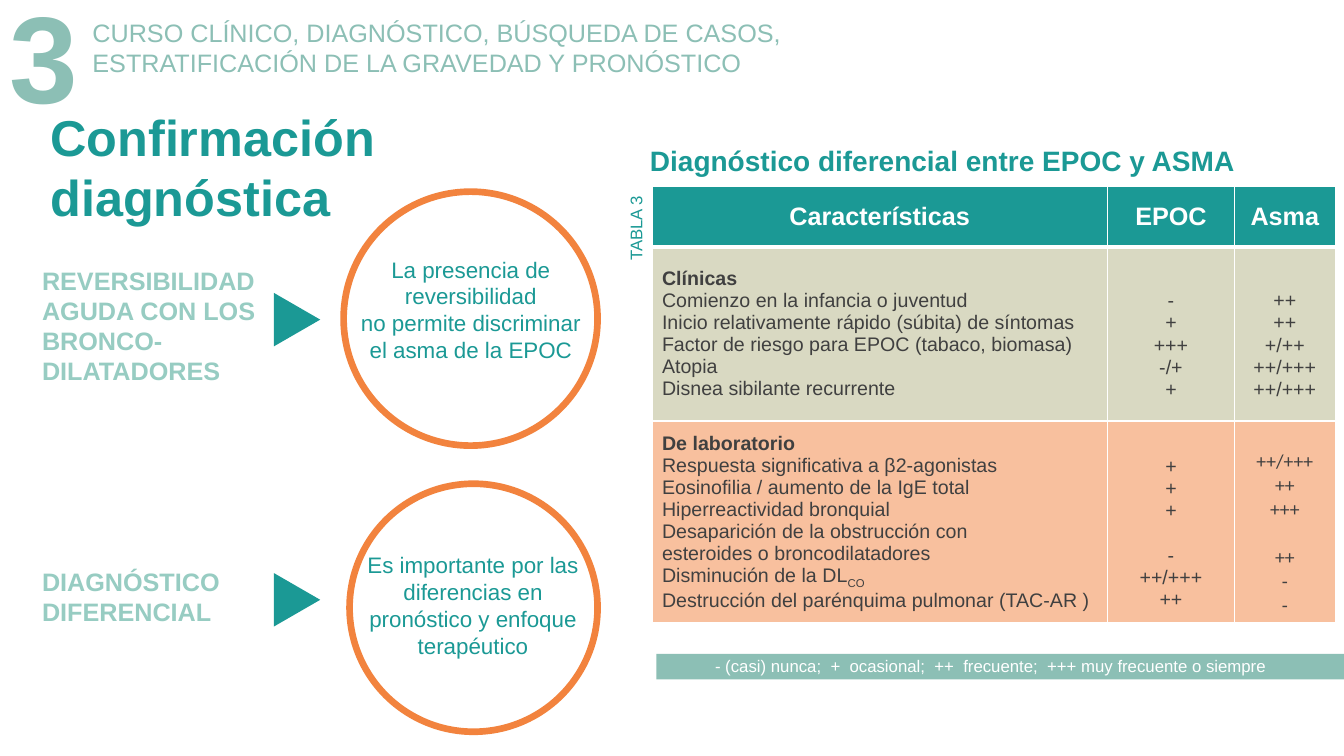
from lxml.etree import SubElement
from pptx import Presentation
from pptx.dml.color import RGBColor
from pptx.enum.shapes import MSO_SHAPE as Preset
from pptx.enum.text import MSO_ANCHOR as Anchor, PP_ALIGN as Align
from pptx.oxml.ns import qn
from pptx.util import Cm, Pt

TEAL, MINT, PALE_MINT = "1B9995", "8CBFB5", "97CCC2"
ORANGE, OLIVE, WHITE, GREY = "F2833E", "B9B98D", "FFFFFF", "404040"
SYMBOL_COLUMNS = (1, 2)

CLINICAL = [
    "Clínicas\nComienzo en la infancia o juventud\n"
    "Inicio relativamente rápido (súbita) de síntomas\n"
    "Factor de riesgo para EPOC (tabaco, biomasa)\nAtopia\n"
    "Disnea sibilante recurrente",
    "-\n+\n+++\n-/+\n+",
    "++\n++\n+/++\n++/+++\n++/+++",
]
LABORATORY = [
    "De laboratorio\nRespuesta significativa a β2-agonistas\n"
    "Eosinofilia / aumento de la IgE total\nHiperreactividad bronquial\n"
    "Desaparición de la obstrucción con\nesteroides o broncodilatadores\n"
    "Disminución de la DL\nDestrucción del parénquima pulmonar (TAC-AR )",
    "+\n+\n+\n-\n++/+++\n++",
    "++/+++\n++\n+++\n++\n-\n-",
]


def color(hex_code):
    return RGBColor.from_string(hex_code)


def format_text(text_frame, size, hex_code, bold=False, align=Align.LEFT, font="Arial"):
    for paragraph in text_frame.paragraphs:
        paragraph.alignment = align
        for run in paragraph.runs:
            run.font.name = font
            run.font.size = Pt(size)
            run.font.bold = bold
            run.font.color.rgb = color(hex_code)


def add_text(slide, box, text, size, hex_code, wrap=True, rotation=0, **style):
    shape = slide.shapes.add_textbox(*map(Cm, box))
    shape.rotation = rotation
    shape.text_frame.word_wrap = wrap
    shape.text_frame.text = text
    format_text(shape.text_frame, size, hex_code, **style)
    return shape


def add_solid(slide, preset, box, hex_code, rotation=0):
    shape = slide.shapes.add_shape(preset, *map(Cm, box))
    shape.shadow.inherit = False
    shape.rotation = rotation
    shape.fill.solid()
    shape.fill.fore_color.rgb = color(hex_code)
    shape.line.fill.background()


def add_ring(slide, left, top, diameter):
    ring = slide.shapes.add_shape(Preset.OVAL, *map(Cm, (left, top, diameter, diameter)))
    ring.shadow.inherit = False
    ring.fill.background()
    ring.line.color.rgb = color(ORANGE)
    ring.line.width = Pt(4.75)


def fill_cell(cell, hex_code, opacity):
    cell.fill.solid()
    cell.fill.fore_color.rgb = color(hex_code)
    if opacity < 100:
        properties = cell._tc.get_or_add_tcPr()
        fill_color = properties.find(qn("a:solidFill")).find(qn("a:srgbClr"))
        SubElement(fill_color, qn("a:alpha"), val=str(opacity * 1000))


def add_borders(cell, top, bottom):
    properties = cell._tc.get_or_add_tcPr()
    widths = {"a:lnL": 1, "a:lnR": 1, "a:lnT": top, "a:lnB": bottom}
    for index, (tag, width) in enumerate(widths.items()):
        line = SubElement(properties, qn(tag), w=str(Pt(width)))
        SubElement(SubElement(line, qn("a:solidFill")), qn("a:srgbClr"), val=WHITE)
        properties.insert(index, line)


def add_comparison_table(slide):
    rows = [["Características", "EPOC", "Asma"], CLINICAL, LABORATORY]
    fills = [(TEAL, 100), (OLIVE, 53), (ORANGE, 50)]
    widths, heights = (11.48, 3.2, 2.54), (1.52, 4.39, 4.88)
    frame = slide.shapes.add_table(
        3, 3, Cm(16.43), Cm(4.7), Cm(sum(widths)), Cm(sum(heights)))
    table = frame.table
    table.first_row = table.horz_banding = False
    for column, width in zip(table.columns, widths):
        column.width = Cm(width)
    for row, height in zip(table.rows, heights):
        row.height = Cm(height)

    for row, texts in enumerate(rows):
        for column, text in enumerate(texts):
            cell = table.cell(row, column)
            cell.text = text
            cell.vertical_anchor = Anchor.MIDDLE
            fill_cell(cell, *fills[row])
            add_borders(cell, 3 if row == 1 else 1, 3 if row == 0 else 1)
            if row == 0:
                format_text(cell.text_frame, 18, WHITE, bold=True, align=Align.CENTER)
            elif column in SYMBOL_COLUMNS:
                font = "Calibri" if (row, column) == (2, 2) else "Arial"
                line_height = Pt(17 if font == "Calibri" else 16)
                format_text(cell.text_frame, 14, GREY, align=Align.CENTER, font=font)
                # Symbols start level with the line below the group name
                cell.margin_top = Cm(0.13) + line_height
                if row == 2:
                    cell.text_frame.paragraphs[3].space_before = line_height
            else:
                format_text(cell.text_frame, 14, GREY)
                cell.text_frame.paragraphs[0].runs[0].font.bold = True

    # Subscript of DLCO
    laboratory = table.cell(2, 0).text_frame
    subscript = laboratory.paragraphs[6].add_run()
    subscript.text = "CO"
    subscript.font.name = "Arial"
    subscript.font.size = Pt(14)
    subscript.font.color.rgb = color(GREY)
    subscript._r.get_or_add_rPr().set("baseline", "-25000")


def main():
    presentation = Presentation()
    presentation.slide_width, presentation.slide_height = Cm(33.87), Cm(19.05)
    slide = presentation.slides.add_slide(presentation.slide_layouts[6])

    # Chapter header and title
    add_text(slide, (0, -0.63, 2.26, 4.02), "3", 88, MINT, wrap=False, bold=True)
    add_text(slide, (2.08, 0.3, 18.2, 1.8),
             "CURSO CLÍNICO, DIAGNÓSTICO, BÚSQUEDA DE CASOS,\n"
             "ESTRATIFICACIÓN DE LA GRAVEDAD Y PRONÓSTICO", 18, MINT, wrap=False)
    add_text(slide, (1.02, 2.54, 12.55, 3.32), "Confirmación diagnóstica",
             36, TEAL, bold=True)

    # Topics, arrows and circled statements
    add_text(slide, (0.81, 6.55, 6.07, 3.32),
             "REVERSIBILIDAD\nAGUDA CON LOS BRONCO-\nDILATADORES",
             18, PALE_MINT, bold=True)
    add_text(slide, (0.81, 14.15, 5.2, 1.8), "DIAGNÓSTICO\nDIFERENCIAL",
             18, PALE_MINT, wrap=False, bold=True)
    for top in (7.47, 14.53):
        add_solid(slide, Preset.ISOSCELES_TRIANGLE, (6.81, top, 1.35, 1.17), TEAL, 90)
    add_ring(slide, 8.66, 4.83, 6.4)
    add_ring(slide, 8.81, 12.19, 6.25)
    add_text(slide, (8.31, 6.32, 7.11, 3),
             "La presencia de reversibilidad\nno permite discriminar\n"
             "el asma de la EPOC", 16, TEAL, align=Align.CENTER)
    add_text(slide, (8.86, 13.77, 6.12, 3),
             "Es importante por las diferencias en pronóstico y enfoque terapéutico",
             16, TEAL, align=Align.CENTER)

    # Comparison table with its heading and label
    add_text(slide, (16.13, 3.5, 16.23, 1.12),
             "Diagnóstico diferencial entre EPOC y ASMA", 20, TEAL, bold=True)
    add_comparison_table(slide)
    add_text(slide, (14.05, 4.47, 3.94, 0.76), "TABLA 3", 12, TEAL, rotation=270)

    # Legend of the symbols
    add_solid(slide, Preset.RECTANGLE, (16.54, 16.48, 17.33, 0.64), MINT)
    legend = add_text(
        slide, (17.77, 16.36, 16.1, 0.79),
        "- (casi) nunca;  +  ocasional;  ++  frecuente;  +++ muy frecuente o siempre",
        12, WHITE, align=Align.JUSTIFY)
    legend.text_frame.paragraphs[0].line_spacing = 1.07

    presentation.save("out.pptx")


if __name__ == "__main__":
    main()
